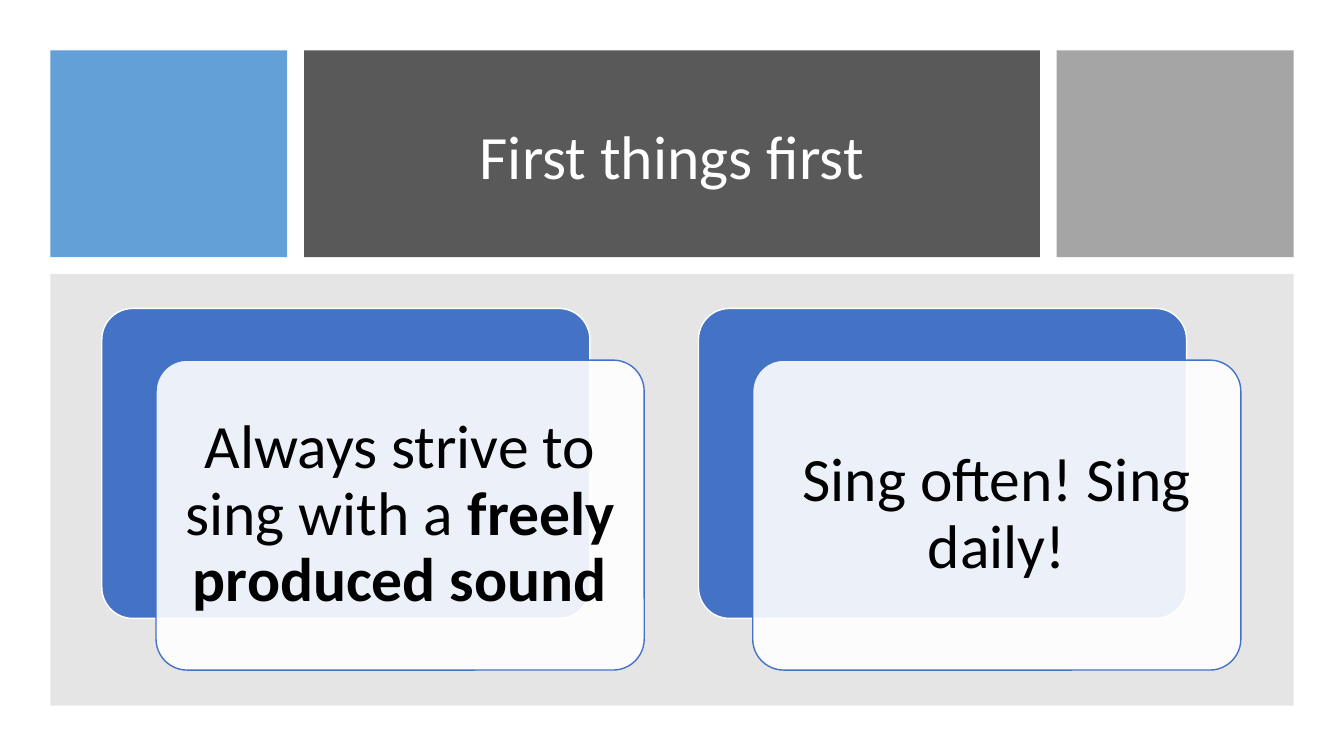
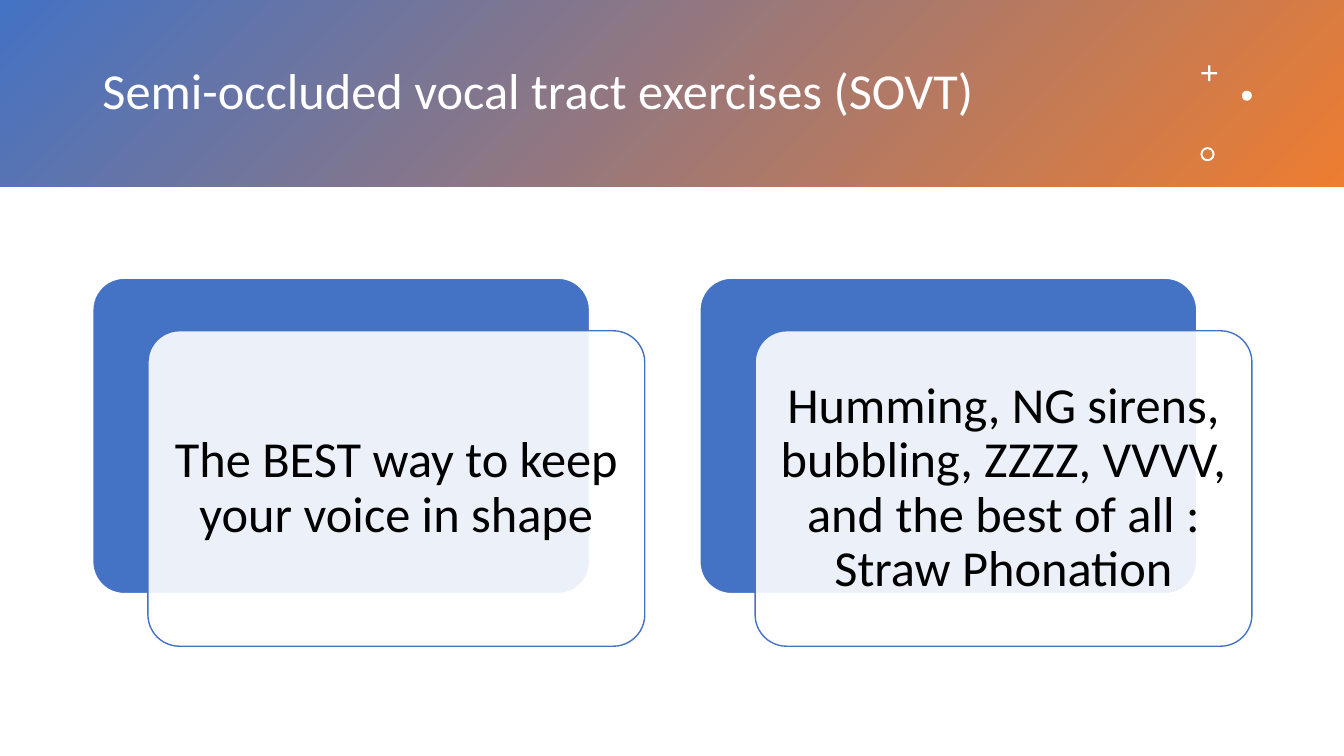
import pptx
import pptx.util
import pptx.dml.color
import pptx.enum.shapes
import pptx.enum.text
import pptx.oxml.ns
import lxml.etree

RGBColor = pptx.dml.color.RGBColor
Preset = pptx.enum.shapes.MSO_SHAPE
Align = pptx.enum.text.PP_ALIGN

WHITE = RGBColor(0xFF, 0xFF, 0xFF)
BLACK = RGBColor(0x00, 0x00, 0x00)
BLUE = RGBColor(0x44, 0x72, 0xC4)
SKY = RGBColor(0x5B, 0x9B, 0xD5)
ORANGE = RGBColor(0xED, 0x7D, 0x31)
CHARCOAL = RGBColor(0x59, 0x59, 0x59)
SILVER = RGBColor(0xA5, 0xA5, 0xA5)
GRAY = RGBColor(0x80, 0x80, 0x80)

FONT = "Calibri"
COLUMNS, ROWS = 80, 45
CELL = pptx.util.Inches(1) / 6
TITLE_ONLY = 5


def cells(*counts):
    return [pptx.util.Emu(round(count * CELL)) for count in counts]


class Deck:
    def __init__(self):
        self.presentation = pptx.Presentation()
        self.presentation.slide_width, self.presentation.slide_height = cells(COLUMNS, ROWS)
        self.slide = None

    def add_slide(self):
        layout = self.presentation.slide_layouts[TITLE_ONLY]
        self.slide = self.presentation.slides.add_slide(layout)

    def set_text(self, shape, runs, size, color, align, inset):
        frame = shape.text_frame
        frame.word_wrap = True
        frame.auto_size = pptx.enum.text.MSO_AUTO_SIZE.NONE
        frame.vertical_anchor = pptx.enum.text.MSO_ANCHOR.MIDDLE
        frame.margin_left = frame.margin_right = pptx.util.Inches(inset)
        frame.margin_top = frame.margin_bottom = pptx.util.Inches(inset)
        paragraph = frame.paragraphs[0]
        paragraph.alignment = align
        paragraph.line_spacing = 0.9
        for text, bold in runs:
            run = paragraph.add_run()
            run.text = text
            run.font.name = FONT
            run.font.size = pptx.util.Pt(size)
            run.font.bold = bold
            run.font.color.rgb = color

    def title(self, text, box, size, align):
        title = self.slide.shapes.title
        title.left, title.top, title.width, title.height = cells(*box)
        self.set_text(title, [(text, False)], size, WHITE, align, 0.1)
        title.element.getparent().append(title.element)

    def shape(self, preset, box, color, opacity=100, line=None, adjustment=None):
        shape = self.slide.shapes.add_shape(preset, *cells(*box))
        shape.shadow.inherit = False
        shape.fill.solid()
        shape.fill.fore_color.rgb = color
        if opacity < 100:
            fill_color = shape.element.spPr.find(".//" + pptx.oxml.ns.qn("a:srgbClr"))
            alpha = lxml.etree.SubElement(fill_color, pptx.oxml.ns.qn("a:alpha"))
            alpha.set("val", str(opacity * 1000))
        if line is None:
            shape.line.fill.background()
        else:
            shape.line.color.rgb = line
            shape.line.width = pptx.util.Pt(1)
        if adjustment is not None:
            shape.adjustments[0] = adjustment
        return shape

    def gradient_band(self, height, start, end):
        band = self.shape(Preset.RECTANGLE, (0, 0, COLUMNS, height), start)
        band.fill.gradient()
        band.fill.gradient_angle = 315
        for stop, color in zip(band.fill.gradient_stops, (start, end)):
            stop.color.rgb = color

    def cards(self, left, top, span, size, texts):
        width = span * 9 / 21
        height = width * 0.635
        shift_x, shift_y = width / 9, height / 6
        for index, runs in enumerate(texts):
            x = left + index * width * 11 / 9
            self.shape(Preset.ROUNDED_RECTANGLE, (x, top, width, height),
                       BLUE, line=WHITE, adjustment=0.1)
            front = self.shape(Preset.ROUNDED_RECTANGLE,
                               (x + shift_x, top + shift_y, width, height),
                               WHITE, opacity=90, line=BLUE, adjustment=0.1)
            self.set_text(front, runs, size, BLACK, Align.CENTER, size / 240)


def first_things(deck):
    margin, gap, side, band = 3, 1, 14.1, 12.3
    full = COLUMNS - 2 * margin
    middle = full - 2 * (side + gap)
    panel_top = margin + band + gap
    deck.add_slide()
    left = margin
    for width, color, opacity in ((side, SKY, 95), (middle, CHARCOAL, 100), (side, SILVER, 100)):
        deck.shape(Preset.RECTANGLE, (left, margin, width, band), color, opacity)
        left += width + gap
    deck.shape(Preset.RECTANGLE, (margin, panel_top, full, ROWS - margin - panel_top), GRAY, 20)
    deck.title("First things first", (20, 4.8, 40, 9.4), 44, Align.CENTER)
    deck.cards(6.06, 18.36, 67.8, 44, [
        [("Always strive to sing with a ", False), ("freely produced sound", True)],
        [("Sing often! Sing daily!", False)],
    ])


def vocal_tract_exercises(deck):
    deck.add_slide()
    deck.gradient_band(11.1, BLUE, ORANGE)
    deck.title("Semi-occluded vocal tract exercises (SOVT)", (5.5, 2, 64.5, 7.1), 36, Align.LEFT)
    for preset, left, top, size, adjustment in (
        (Preset.CROSS, 71.52, 3.9, 0.93, 0.43),
        (Preset.OVAL, 73.92, 5.4, 0.6, None),
        (Preset.DONUT, 71.46, 8.76, 0.84, 0.14),
    ):
        deck.shape(preset, (left, top, size, size), WHITE, adjustment=adjustment)
    deck.cards(5.52, 16.56, 69, 36, [
        [("The BEST way to keep your voice in shape", False)],
        [("Humming, NG sirens, bubbling, ZZZZ, VVVV, and the best of all : Straw Phonation", False)],
    ])


def main():
    deck = Deck()
    first_things(deck)
    vocal_tract_exercises(deck)
    deck.presentation.save("out.pptx")


if __name__ == "__main__":
    main()
